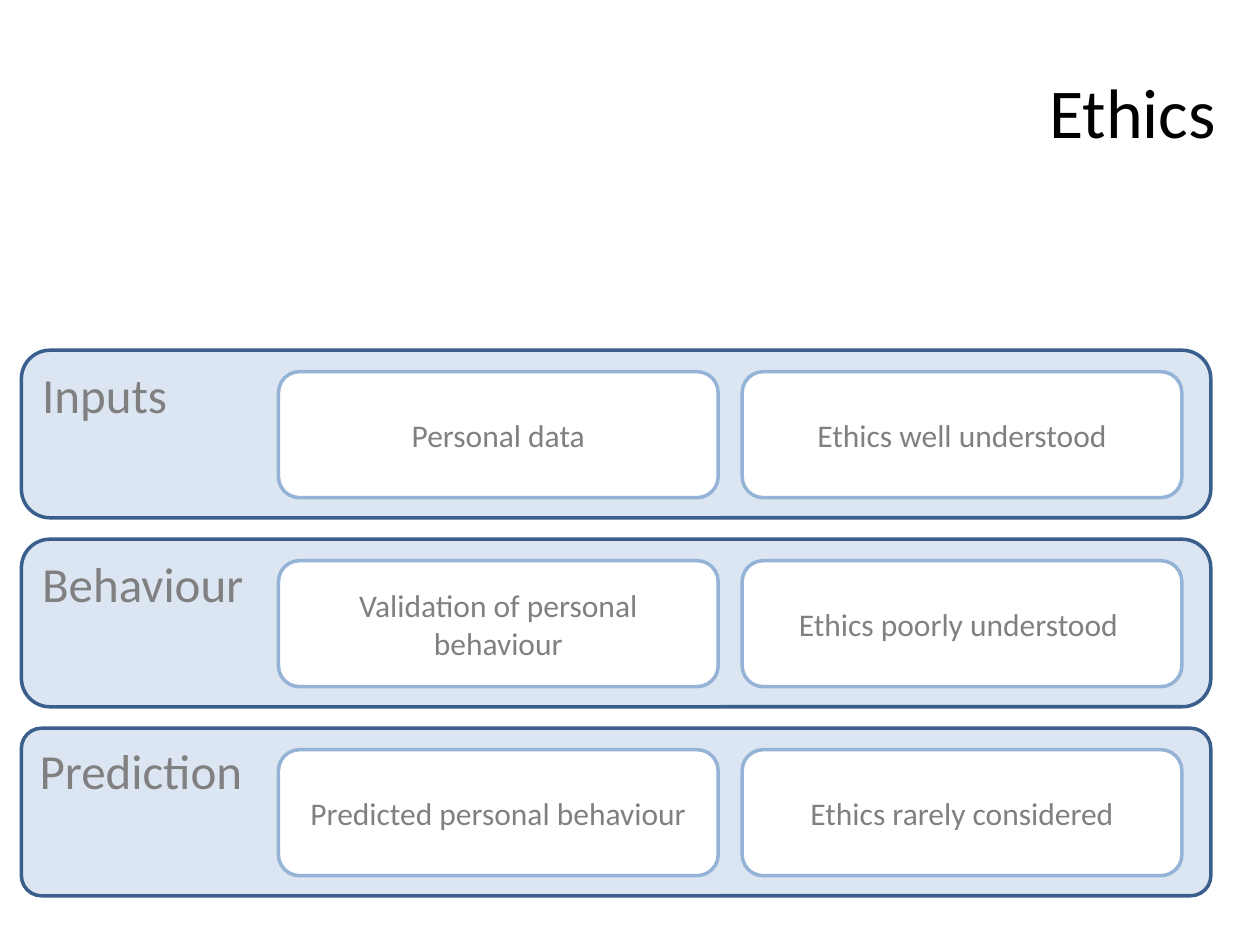
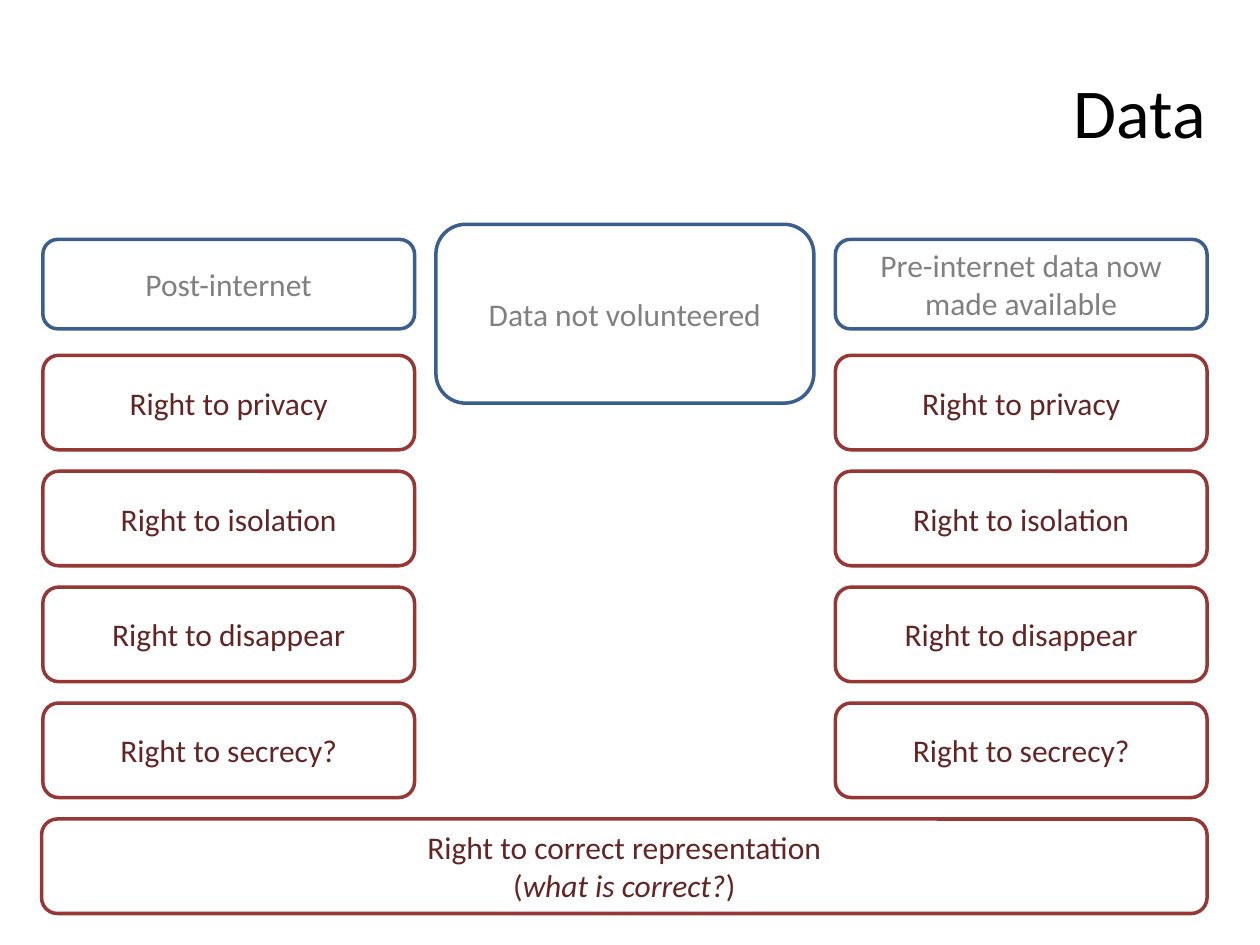
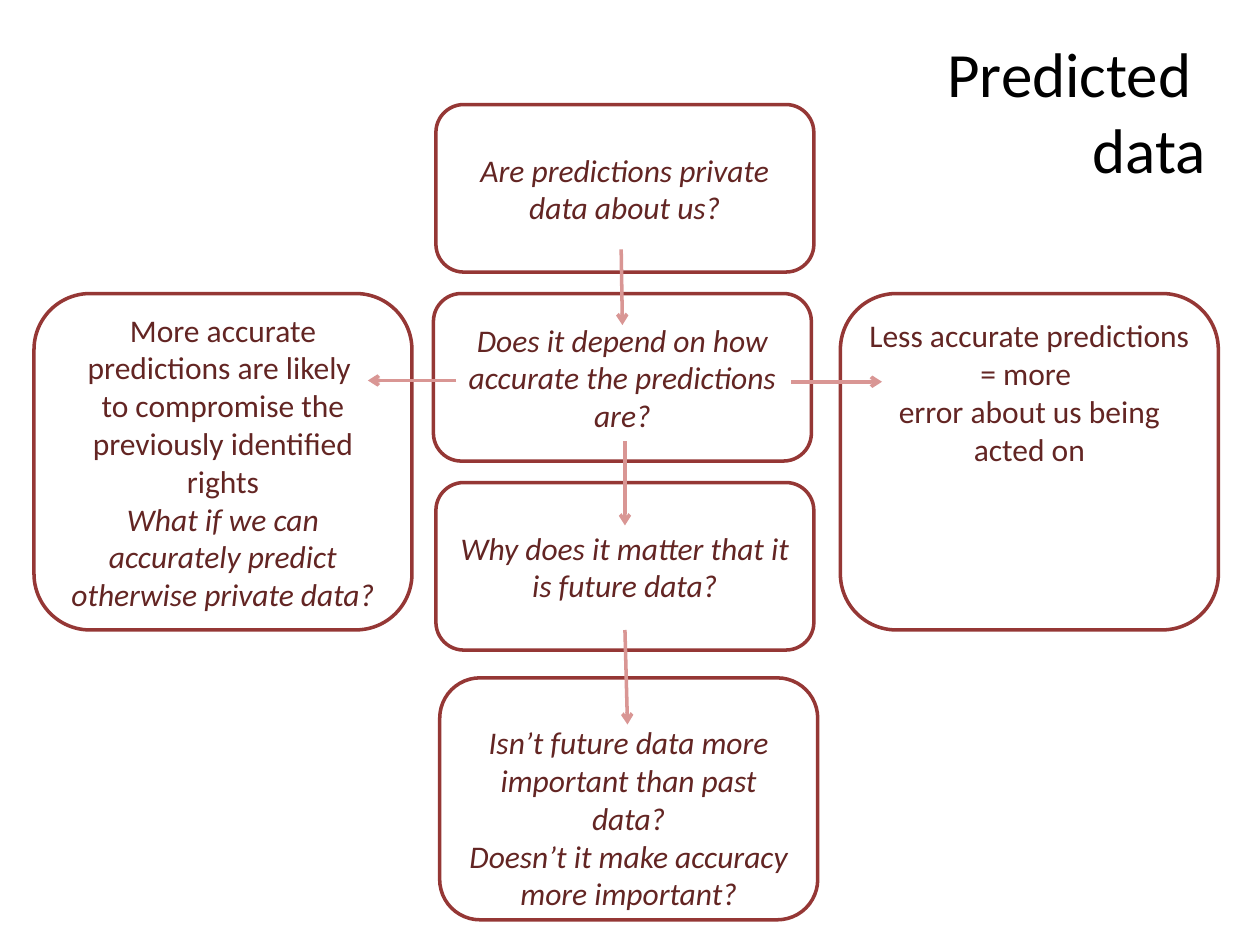
"""Build three slides on the ethics of personal and predicted data."""
from pptx import Presentation
from pptx import util as u
from pptx.dml.color import RGBColor
from pptx.enum import shapes, text
from pptx.oxml.ns import qn
from lxml import etree

FONT = "Calibri"
BLACK = RGBColor(0x00, 0x00, 0x00)
WHITE = RGBColor(0xFF, 0xFF, 0xFF)
GREY = RGBColor(0x80, 0x80, 0x80)
PALE_BLUE = RGBColor(0xDC, 0xE6, 0xF2)
LIGHT_BLUE = RGBColor(0x95, 0xB3, 0xD7)
BLUE = RGBColor(0x3A, 0x5F, 0x8C)
RED = RGBColor(0x95, 0x37, 0x35)
DARK_RED = RGBColor(0x63, 0x25, 0x23)
PINK = RGBColor(0xD9, 0x96, 0x94)
LINE_WIDTH = u.Pt(2)
TITLE_TOP, TITLE_HEIGHT = 0.25, 1.25


def add_titled_slide(title_text, left, width, size=40):
    slide = presentation.slides.add_slide(presentation.slide_layouts[5])
    title = slide.shapes.title
    title.left, title.top = u.Inches(left), u.Inches(TITLE_TOP)
    title.width, title.height = u.Inches(width), u.Inches(TITLE_HEIGHT)
    title.text_frame.text = title_text
    title.text_frame.vertical_anchor = text.MSO_ANCHOR.MIDDLE
    paragraph = title.text_frame.paragraphs[0]
    paragraph.alignment = text.PP_ALIGN.RIGHT
    for run in paragraph.runs:
        run.font.name, run.font.size = FONT, u.Pt(size)
        run.font.color.rgb = BLACK
    return slide


def add_box(slide, place, paragraphs, line, color, fill=None, size=18):
    shape = slide.shapes.add_shape(
        shapes.MSO_SHAPE.ROUNDED_RECTANGLE, *map(u.Inches, place))
    shape.shadow.inherit = False
    shape.line.color.rgb, shape.line.width = line, LINE_WIDTH
    if fill is None:
        shape.fill.background()
    else:
        shape.fill.solid()
        shape.fill.fore_color.rgb = fill
    frame = shape.text_frame
    frame.word_wrap = True
    for index, runs in enumerate(paragraphs):
        paragraph = frame.add_paragraph() if index else frame.paragraphs[0]
        paragraph.alignment = text.PP_ALIGN.CENTER
        for words, italic in runs:
            run = paragraph.add_run()
            run.text = words
            run.font.name, run.font.size = FONT, u.Pt(size)
            run.font.italic = italic
            run.font.color.rgb = color
    return shape


presentation = Presentation()
presentation.slide_width, presentation.slide_height = u.Inches(10), u.Inches(7.5)

ethics = add_titled_slide("Ethics", 0.75, 9)
BAND_TOP, BAND_STEP, BAND_HEIGHT, CARD_INSET = 2.78, 1.5, 1.33, 0.17
CARD_LEFT, CARD_STEP, CARD_WIDTH, CARD_HEIGHT = 2.21, 3.68, 3.49, 1
bands = [
    ("Inputs", 0.17, ["Personal data", "Ethics well understood"]),
    ("Behaviour", 0.17,
     ["Validation of personal behaviour", "Ethics poorly understood "]),
    ("Prediction", 0.12,
     ["Predicted personal behaviour", "Ethics rarely considered"]),
]
for row, (label, rounding, cards) in enumerate(bands):
    top = BAND_TOP + row * BAND_STEP
    band = add_box(ethics, (0.17, top, 9.44, BAND_HEIGHT), [[(label, False)]],
                   BLUE, GREY, PALE_BLUE, 28)
    band.adjustments[0] = rounding
    band.text_frame.vertical_anchor = text.MSO_ANCHOR.TOP
    band.text_frame.paragraphs[0].alignment = text.PP_ALIGN.LEFT
    for column, words in enumerate(cards):
        place = (CARD_LEFT + column * CARD_STEP, top + CARD_INSET,
                 CARD_WIDTH, CARD_HEIGHT)
        add_box(ethics, place, [[(words, False)]], LIGHT_BLUE, GREY, WHITE)

data = add_titled_slide("Data", 0.5, 9.17)
RIGHT_TOP, RIGHT_STEP, RIGHT_WIDTH, RIGHT_HEIGHT = 2.82, 0.92, 2.95, 0.75
rights = ["Right to privacy", "Right to isolation",
          "Right to disappear", "Right to secrecy?"]
add_box(data, (3.46, 1.78, 3, 1.42), [[("Data not volunteered", False)]], BLUE, GREY)
for left, heading in [(0.34, "Post-internet"),
                      (6.63, "Pre-internet data now made available")]:
    add_box(data, (left, 1.9, RIGHT_WIDTH, 0.71), [[(heading, False)]], BLUE, GREY)
    for row, right in enumerate(rights):
        place = (left, RIGHT_TOP + row * RIGHT_STEP, RIGHT_WIDTH, RIGHT_HEIGHT)
        add_box(data, place, [[(right, False)]], RED, DARK_RED)
add_box(data, (0.33, RIGHT_TOP + 4 * RIGHT_STEP, 9.25, RIGHT_HEIGHT),
        [[("Right to correct representation", False)],
         [("(", False), ("what is correct?", True), (")", False)]],
        RED, DARK_RED)

predicted = add_titled_slide("Predicted \vdata", 0.67, 9, 36)
QUESTION_WIDTH, QUESTION_HEIGHT, ANSWER_HEIGHT = 3, 1.33, 2.67
questions = [
    (3.46, 0.83, "Are predictions private data about us?"),
    (3.44, 2.33, "Does it depend on how accurate the predictions are?"),
    (3.46, 3.83, "Why does it matter that it is future data?"),
]
for left, top, question in questions:
    add_box(predicted, (left, top, QUESTION_WIDTH, QUESTION_HEIGHT),
            [[(question, True)]], RED, DARK_RED)
less_accurate = add_box(
    predicted, (6.67, 2.33, QUESTION_WIDTH, ANSWER_HEIGHT),
    [[("Less accurate predictions = more ", False)],
     [("error about us being acted on", False)]], RED, DARK_RED)
less_accurate.text_frame.vertical_anchor = text.MSO_ANCHOR.TOP
add_box(predicted, (0.27, 2.33, QUESTION_WIDTH, ANSWER_HEIGHT),
        [[("More accurate predictions are likely ", False)],
         [("to compromise the previously identified rights", False)],
         [("What if we can accurately predict otherwise private data?", True)]],
        RED, DARK_RED)
future = add_box(predicted, (3.49, 5.38, QUESTION_WIDTH, 1.92),
                 [[("Isn’t future data more important than past data?", True)],
                  [("Doesn’t it make accuracy more important?", True)]],
                 RED, DARK_RED)
future.text_frame.margin_top = u.Inches(0.35)

arrows = [
    (3.62, 3.02, 2.92, 3.02),
    (6.28, 3.03, 7, 3.03),
    (4.96, 3.5, 4.96, 4.17),
    (4.96, 5, 4.98, 5.75),
    (4.93, 1.98, 4.94, 2.58),
]
for ends in arrows:
    arrow = predicted.shapes.add_connector(
        shapes.MSO_CONNECTOR.STRAIGHT, *map(u.Inches, ends))
    arrow.line.color.rgb, arrow.line.width = PINK, LINE_WIDTH
    etree.SubElement(arrow.line._get_or_add_ln(), qn("a:tailEnd"), type="arrow")
    etree.SubElement(arrow._element.spPr, qn("a:effectLst"))

presentation.save("out.pptx")
